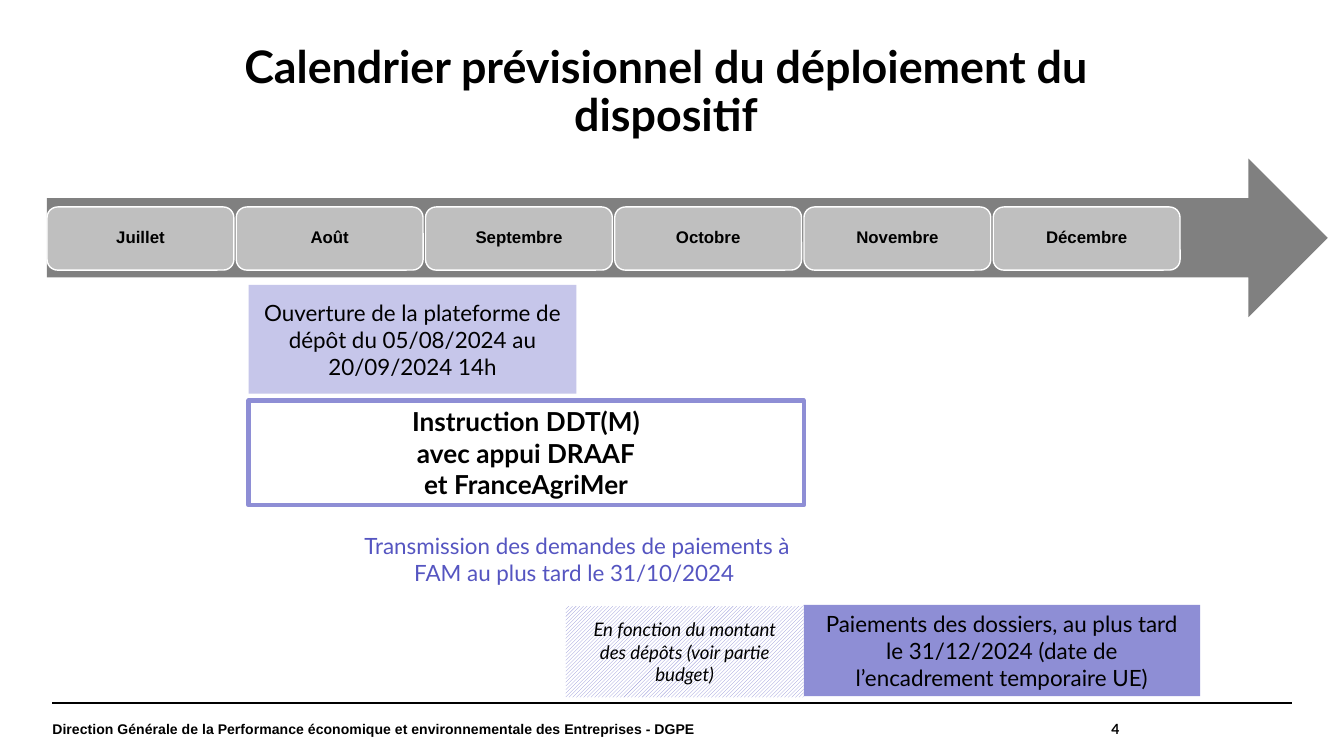
from pptx import Presentation
from pptx.dml.color import RGBColor
from pptx.enum.dml import MSO_PATTERN
from pptx.enum.shapes import MSO_CONNECTOR, MSO_SHAPE
from pptx.enum.text import MSO_ANCHOR, MSO_AUTO_SIZE, PP_ALIGN
from pptx.oxml.ns import qn
from pptx.util import Inches, Pt
from lxml import etree

RECTANGLE = MSO_SHAPE.RECTANGLE
ROUNDED = MSO_SHAPE.ROUNDED_RECTANGLE
ARROW = MSO_SHAPE.RIGHT_ARROW
STRAIGHT = MSO_CONNECTOR.STRAIGHT
NO_AUTOFIT = MSO_AUTO_SIZE.NONE
LEFT, CENTER, RIGHT = PP_ALIGN.LEFT, PP_ALIGN.CENTER, PP_ALIGN.RIGHT
TOP, MIDDLE = MSO_ANCHOR.TOP, MSO_ANCHOR.MIDDLE
HATCH = MSO_PATTERN.DARK_UPWARD_DIAGONAL

THEME = {
    "black": RGBColor.from_string("000000"),
    "white": RGBColor.from_string("FFFFFF"),
    "arrow": RGBColor.from_string("808080"),
    "month": RGBColor.from_string("BFBFBF"),
    "violet": RGBColor.from_string("8E8ED5"),
    "lilac": RGBColor.from_string("C6C6EA"),
    "violet_text": RGBColor.from_string("5555C1"),
    "heading_font": "Lato",
    "label_font": "Arial",
    "title_size": Pt(24),
    "strong_size": Pt(14),
    "body_size": Pt(12),
    "note_size": Pt(10),
    "month_size": Pt(9),
    "footer_size": Pt(7.5),
}


def write(shape, lines, size, font="heading_font", color="black", align=CENTER,
          anchor=MIDDLE, inset=None, spacing=1.0, **styles):
    frame = shape.text_frame
    frame_format = {"word_wrap": True, "auto_size": NO_AUTOFIT,
                    "vertical_anchor": anchor}
    if inset is not None:
        for side in ("left", "top", "right", "bottom"):
            frame_format[f"margin_{side}"] = Inches(inset)
    for name, value in frame_format.items():
        setattr(frame, name, value)
    frame.text = "\n".join(lines)
    font_format = {"name": THEME[font], "size": THEME[size], **styles}
    for paragraph in frame.paragraphs:
        paragraph.alignment = align
        paragraph.line_spacing = spacing
        paragraph.font.color.rgb = THEME[color]
        for name, value in font_format.items():
            setattr(paragraph.font, name, value)


def add_block(kind, box, fill=None, line=None, line_width=0):
    shape = slide.shapes.add_shape(kind, *map(Inches, box))
    shape.shadow.inherit = False
    if fill:
        shape.fill.solid()
        shape.fill.fore_color.rgb = THEME[fill]
    else:
        shape.fill.background()
    if line:
        shape.line.color.rgb = THEME[line]
        shape.line.width = Pt(line_width)
    else:
        shape.line.fill.background()
    return shape


# Widescreen slide, 16:9
presentation = Presentation()
presentation.slide_width = Inches(10)
presentation.slide_height = Inches(10 * 9 / 16)
slide = presentation.slides.add_slide(presentation.slide_layouts[5])

# Title
title = slide.shapes.title
title_box = {"left": 1.46, "top": 0.33, "width": 6.99, "height": 0.75}
for name, value in title_box.items():
    setattr(title, name, Inches(value))
write(title, ["Calendrier prévisionnel du déploiement du dispositif"],
      "title_size", anchor=TOP, inset=0, spacing=0.9, bold=True)

# Timeline arrow and months
add_block(ARROW, (0.35, 1.18, 9.53, 1.18), "arrow")
MONTHS = ["Juillet", "Août", "Septembre", "Octobre", "Novembre", "Décembre"]
FIRST_LEFT, LAST_LEFT = 0.35, 7.39
month_step = (LAST_LEFT - FIRST_LEFT) / (len(MONTHS) - 1)
for index, month in enumerate(MONTHS):
    month_box = add_block(ROUNDED, (FIRST_LEFT + month_step * index, 1.54, 1.39, 0.47),
                          "month", "white", 0.75)
    write(month_box, [month], "month_size", font="label_font", inset=0.04,
          spacing=0.9, bold=True)

# Stages of the scheme
instruction = add_block(RECTANGLE, (1.85, 2.98, 4.13, 0.78), None, "violet", 2.25)
write(instruction, [" Instruction DDT(M) ", "avec appui DRAAF", "et FranceAgriMer"],
      "strong_size", bold=True)

STAGES = [
    ((5.98, 4.5, 2.95, 0.68), "violet", "black",
     "Paiements des dossiers, au plus tard le 31/12/2024 "
     "(date de l’encadrement temporaire UE)"),
    ((1.85, 2.12, 2.44, 0.81), "lilac", "black",
     "Ouverture de la plateforme de dépôt du 05/08/2024 au 20/09/2024 14h"),
    ((2.6, 3.86, 3.39, 0.6), "white", "violet_text",
     "Transmission des demandes de paiements à FAM au plus tard le 31/10/2024 "),
]
for box, fill, color, text in STAGES:
    write(add_block(RECTANGLE, box, fill), [text], "body_size", color=color)

# Hatched budget note
budget_note = add_block(RECTANGLE, (4.21, 4.51, 1.77, 0.68))
budget_note.fill.patterned()
budget_note.fill.pattern = HATCH
budget_note.fill.fore_color.rgb = THEME["violet"]
budget_note.fill.back_color.rgb = THEME["white"]
write(budget_note, ["En fonction du montant des dépôts (voir partie budget)"],
      "note_size", italic=True)

# Footer rule, department and page number
rule = slide.shapes.add_connector(STRAIGHT, Inches(0.39), Inches(5.23),
                                  Inches(9.61), Inches(5.23))
rule.line.color.rgb = THEME["black"]
rule.line.width = Pt(1)
etree.SubElement(rule.element.spPr, qn("a:effectLst"))

FOOTERS = [
    (0.39, 6.46, "label_font", LEFT,
     "Direction Générale de la Performance économique et environnementale "
     "des Entreprises - DGPE"),
    (6.85, 1.48, "heading_font", RIGHT, "4"),
]
for left, width, font, align, text in FOOTERS:
    footer = slide.shapes.add_textbox(Inches(left), Inches(5.23),
                                      Inches(width), Inches(0.39))
    write(footer, [text], "footer_size", font=font, align=align, inset=0, bold=True)

presentation.save("out.pptx")
